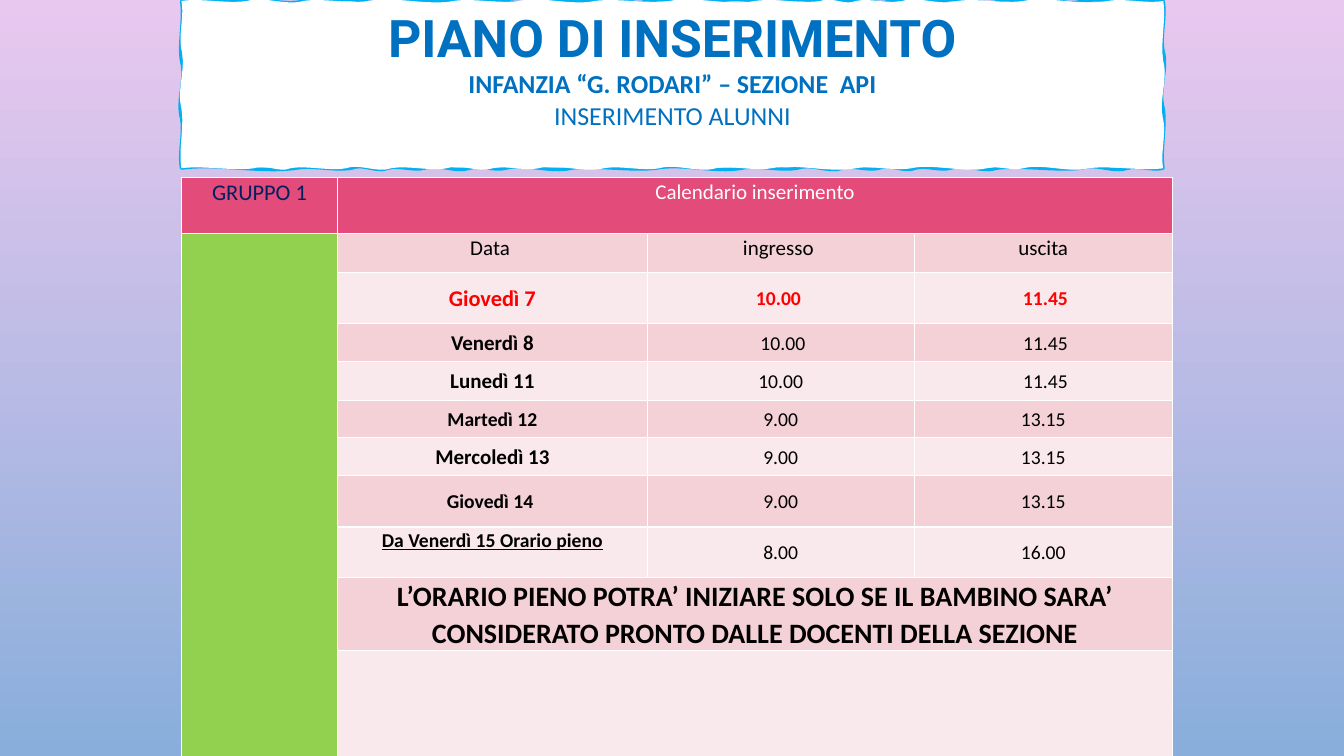
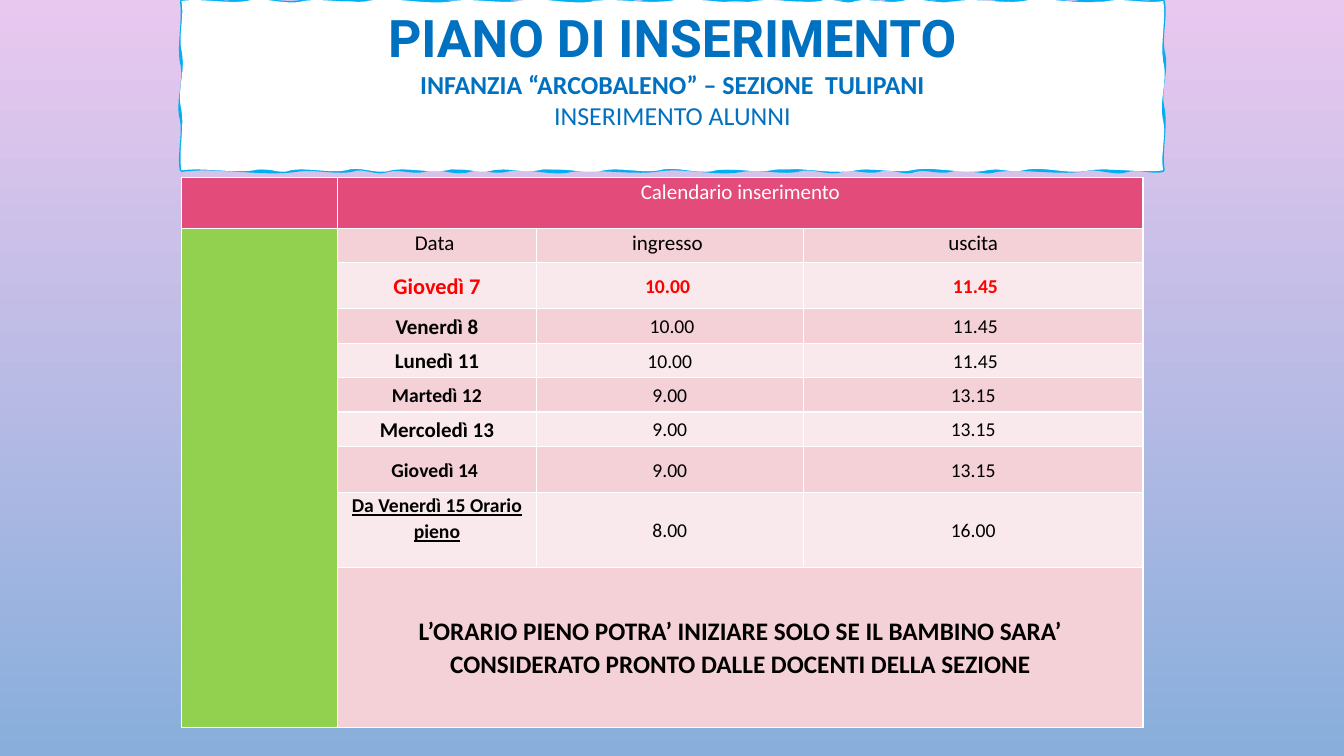
import dataclasses
import itertools

import pptx
import pptx.dml.color
import pptx.enum.text
import pptx.oxml
import pptx.oxml.ns
import pptx.util


@dataclasses.dataclass(frozen=True)
class Theme:
    sky: str = "E9C8EF"
    sea: str = "89AEDB"
    white: str = "FFFFFF"
    black: str = "000000"
    red: str = "FF0000"
    navy: str = "002060"
    title: str = "0070C0"
    frame: str = "00B0F0"
    header: str = "E34B7A"
    group: str = "92D050"
    bands: tuple = ("F4D0D7", "FAE9EC")
    title_font: str = "Roboto"
    body_font: str = "Calibri"
    title_size: float = 37
    subtitle_size: float = 18.5
    strong_size: float = 16
    label_size: float = 15
    time_size: float = 14
    line_spacing: float = 1.07
    border: float = 1
    frame_line: float = 2.25


@dataclasses.dataclass(frozen=True)
class Box:
    left: float
    top: float
    width: float
    height: float


THEME = Theme()
UNIT = pptx.util.Inches(0.1)
PAGE_COLUMNS, PAGE_ROWS = 133.33, 75
TOP = pptx.enum.text.MSO_ANCHOR.TOP
MIDDLE = pptx.enum.text.MSO_ANCHOR.MIDDLE

OUTLINE_WAVES = (
    (5.6, 6.5, 3.5, 4.6, 8.4, 6.5, 7.5, 3.5, 7.5, 6.5, 6.5, 3.6, 5.5, 5.5, 3.6, 4.5, 8.1),
    (3.5, 4.6, 8.4, 4.6, 3.5, 3.6, 3.6, 4.5, 5.5, 8.5, 8.4, 6.5, 3.6, 4.5, 3.6, 3.6, 5.5, 11.4),
)
SHEET_WAVES = (
    (6.5, 5.6, 6.5, 8.4, 6.5, 7.5, 7.4, 8.5, 6.5, 3.5, 4.6, 5.5, 6.5, 8.4, 5.5),
    (7.4, 6.5, 3.6, 7.5, 5.5, 8.4, 5.5, 5.6, 5.5, 6.5, 4.5, 4.6, 5.5, 4.5, 5.5, 3.6, 7.2),
)
OUTLINE_SIDE, SHEET_SIDE = (3, 3.4, 3.6), (3.6, 3.5, 2.9)
SWINGS = (0.3, 0.5)

HEADINGS = ("Data ", "ingresso ", "uscita")
DAYS = (
    ("Giovedì 7", "10.00 ", " 11.45"),
    ("Venerdì 8", " 10.00", " 11.45"),
    ("Lunedì 11", "10.00", " 11.45"),
    ("Martedì 12", "9.00", "13.15"),
    ("Mercoledì 13", "9.00", "13.15"),
    ("Giovedì 14 ", "9.00", "13.15"),
    ("Da Venerdì 15 Orario pieno", "8.00", "16.00"),
)
LABEL_SIZES = (THEME.strong_size, THEME.label_size, THEME.label_size, THEME.time_size,
               THEME.label_size, THEME.time_size, THEME.time_size)
NOTE = ("L’ORARIO PIENO POTRA’ INIZIARE SOLO SE IL BAMBINO SARA’ "
        "CONSIDERATO PRONTO DALLE DOCENTI DELLA SEZIONE")

PLANS = (
    dict(section="INFANZIA “G. RODARI” – SEZIONE  API", group="GRUPPO 1",
         banner=Box(18, 0.1, 97.4, 16.6), columns=(15.5, 30.7, 26.5, 25.6),
         rows=(5.6, 3.8, 5.1, 3.8, 3.8, 3.7, 3.8, 5.1, 5, 7.1, 13.3),
         note_size=20, note_anchor=TOP),
    dict(section="INFANZIA “ARCOBALENO” – SEZIONE  TULIPANI", group="",
         banner=Box(18, 0.1, 97.4, 16.8), columns=(15.5, 19.7, 26.5, 33.7),
         rows=(5.05, 3.4, 4.6, 3.42, 3.42, 3.4, 3.4, 4.6, 7.4, 15.9),
         note_size=18, note_anchor=MIDDLE),
)


def grid(count):
    return round(count * UNIT)


def rgb(code):
    return pptx.dml.color.RGBColor.from_string(code)


def write_text(para, text, size=THEME.time_size, color=THEME.black, font=THEME.body_font,
               bold=False, underline=False, spacing=None):
    para.alignment = pptx.enum.text.PP_ALIGN.CENTER
    if spacing:
        para.line_spacing = spacing
    span = para.add_run()
    span.text = text
    span.font.size = pptx.util.Pt(size)
    span.font.name = font
    span.font.bold = bold
    span.font.underline = underline
    span.font.color.rgb = rgb(color)


def paint_background(page):
    fill = page.background.fill
    fill.gradient()
    fill.gradient_angle = 270
    for stop, color in zip(fill.gradient_stops, (THEME.sky, THEME.sea)):
        stop.color.rgb = rgb(color)


def point_xml(x, y):
    return f'<a:pt x="{grid(x)}" y="{grid(y)}"/>'


def wave_path(box, waves, side, attribute):
    top, bottom = waves
    edges = (
        (0, 0, 1, 0, box.width, top),
        (box.width, 0, 0, 1, box.height, side),
        (box.width, box.height, -1, 0, box.width, bottom),
        (0, box.height, 0, -1, box.height, side),
    )
    curves = []
    for x, y, step_x, step_y, length, steps in edges:
        ratio = length / sum(steps)
        for step, swing in zip(steps, itertools.cycle(SWINGS)):
            reach = step * ratio
            bends = ((0.3, swing), (0.7, -swing), (1, 0))
            points = "".join(point_xml(x + step_x * reach * share + step_y * shift,
                                       y + step_y * reach * share - step_x * shift)
                             for share, shift in bends)
            curves.append(f"<a:cubicBezTo>{points}</a:cubicBezTo>")
            x, y = x + step_x * reach, y + step_y * reach
    return pptx.oxml.parse_xml(
        f'<a:path {pptx.oxml.ns.nsdecls("a")} w="{grid(box.width)}" h="{grid(box.height)}" '
        f'{attribute}><a:moveTo>{point_xml(0, 0)}</a:moveTo>{"".join(curves)}<a:close/></a:path>')


def wavy_sheet(page, box):
    left, top = grid(box.left), grid(box.top)
    right, bottom = left + grid(box.width), top + grid(box.height)
    builder = page.shapes.build_freeform(left, top, scale=1.0)
    builder.add_line_segments(((right, top), (right, bottom), (left, bottom)), close=True)
    sheet = builder.convert_to_shape()
    paths = sheet._element.find(".//" + pptx.oxml.ns.qn("a:pathLst"))
    paths.remove(paths[0])
    paths.append(wave_path(box, OUTLINE_WAVES, OUTLINE_SIDE, 'fill="none"'))
    paths.append(wave_path(box, SHEET_WAVES, SHEET_SIDE, 'stroke="0"'))
    sheet.shadow.inherit = False
    sheet.fill.solid()
    sheet.fill.fore_color.rgb = rgb(THEME.white)
    sheet.line.color.rgb = rgb(THEME.frame)
    sheet.line.width = pptx.util.Pt(THEME.frame_line)
    return sheet


def add_banner(page, box, section):
    frame = wavy_sheet(page, box).text_frame
    frame.word_wrap = True
    frame.vertical_anchor = TOP
    write_text(frame.paragraphs[0], "PIANO DI INSERIMENTO", size=THEME.title_size,
               color=THEME.title, font=THEME.title_font, bold=True)
    for text, bold in ((section, True), ("INSERIMENTO ALUNNI", False)):
        write_text(frame.add_paragraph(), text, size=THEME.subtitle_size,
                   color=THEME.title, bold=bold)


def add_borders(cell):
    properties = cell._tc.get_or_add_tcPr()
    for side in ("lnL", "lnR", "lnT", "lnB"):
        properties.append(pptx.oxml.parse_xml(
            f'<a:{side} {pptx.oxml.ns.nsdecls("a")} w="{pptx.util.Pt(THEME.border)}">'
            f'<a:solidFill><a:srgbClr val="{THEME.white}"/></a:solidFill></a:{side}>'))


def fill_cell(cell, text, anchor=MIDDLE, **style):
    cell.vertical_anchor = anchor
    if text:
        write_text(cell.text_frame.paragraphs[0], text, spacing=THEME.line_spacing, **style)


def prepare_cells(table):
    for row_index, row in enumerate(table.rows):
        for column_index, cell in enumerate(row.cells):
            add_borders(cell)
            color = THEME.bands[(row_index - 1) % 2]
            if row_index == 0:
                color = THEME.header
            elif column_index == 0:
                color = THEME.group
            cell.fill.solid()
            cell.fill.fore_color.rgb = rgb(color)
            cell.margin_left = cell.margin_right = grid(0.8)
            cell.margin_top = cell.margin_bottom = 0


def add_calendar(page, left, top, columns, rows, group, note_size, note_anchor):
    table = page.shapes.add_table(len(rows), len(columns), grid(left), grid(top),
                                  grid(sum(columns)), grid(sum(rows))).table
    table.horz_banding = False
    for column, width in zip(table.columns, columns):
        column.width = grid(width)
    for row, height in zip(table.rows, rows):
        row.height = grid(height)
    prepare_cells(table)

    note_row = len(DAYS) + 2
    last_row, last_column = len(rows) - 1, len(columns) - 1
    table.cell(1, 0).merge(table.cell(last_row, 0))
    for row in (0, *range(note_row, last_row + 1)):
        table.cell(row, 1).merge(table.cell(row, last_column))

    fill_cell(table.cell(0, 0), group, TOP, size=THEME.strong_size, color=THEME.navy)
    fill_cell(table.cell(0, 1), "Calendario inserimento", TOP,
              size=THEME.label_size, color=THEME.white)
    for column, heading in enumerate(HEADINGS, start=1):
        fill_cell(table.cell(1, column), heading, TOP, size=THEME.label_size)
    for index, (day, *times) in enumerate(DAYS):
        first, full_time = index == 0, index == len(DAYS) - 1
        color = THEME.red if first else THEME.black
        fill_cell(table.cell(index + 2, 1), day, TOP if full_time else MIDDLE,
                  size=LABEL_SIZES[index], color=color, bold=True, underline=full_time)
        for column, time in enumerate(times, start=2):
            fill_cell(table.cell(index + 2, column), time, color=color, bold=first)
    fill_cell(table.cell(note_row, 1), NOTE, note_anchor, size=note_size, bold=True)


def add_plan_page(deck, section, banner, **calendar):
    page = deck.slides.add_slide(deck.slide_layouts[6])
    paint_background(page)
    add_calendar(page, left=banner.left, top=17.6, **calendar)
    add_banner(page, banner, section)


def main():
    deck = pptx.Presentation()
    deck.slide_width, deck.slide_height = grid(PAGE_COLUMNS), grid(PAGE_ROWS)
    for plan in PLANS:
        add_plan_page(deck, **plan)
    deck.save("out.pptx")


if __name__ == "__main__":
    main()
